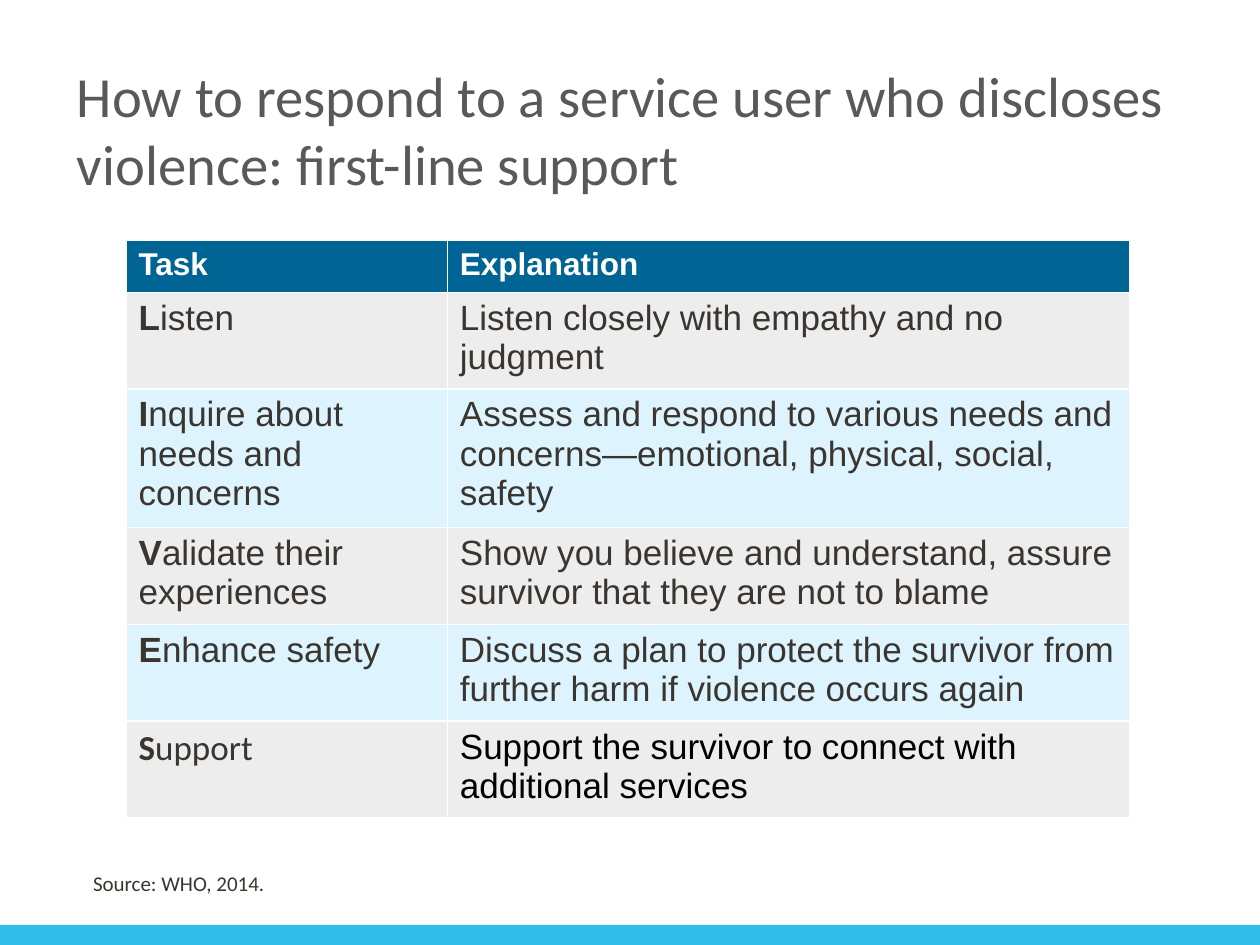
from pptx import Presentation
from pptx.dml.color import RGBColor
from pptx.enum.shapes import MSO_SHAPE
from pptx.enum.text import MSO_ANCHOR, PP_ALIGN
from pptx.util import Inches, Pt

# Content
TITLE = "How to respond to a service user who discloses violence: first-line support"
SOURCE = "Source: WHO, 2014."
HEADINGS = ("Task", "Explanation")
TASKS = [  # the first letter of each task spells LIVES
    ("Listen", "Listen closely with empathy and no judgment"),
    ("Inquire about needs and concerns",
     "Assess and respond to various needs and concerns—emotional, physical, social, safety"),
    ("Validate their experiences",
     "Show you believe and understand, assure survivor that they are not to blame"),
    ("Enhance safety",
     "Discuss a plan to protect the survivor from further harm if violence occurs again"),
    ("Support", "Support the survivor to connect with additional services"),
]
COLORS = {
    "title": "595959", "text": "3B352F", "black": "000000", "white": "FFFFFF",
    "header": "006595", "gray": "EDEDED", "pale": "DDF4FF", "bar": "32BDEA",
}
COLUMN_WIDTHS = (2.55, 5.42)
ROW_HEIGHT = 0.41


def color(name):
    return RGBColor.from_string(COLORS[name])


def add_text(paragraph, text, size=20, font="Arial", ink="text", bold=False):
    span = paragraph.add_run()
    span.text = text
    span.font.size = Pt(size)
    span.font.name = font
    span.font.bold = bold
    span.font.color.rgb = color(ink)


def fill_cell(cell, name):
    cell.fill.solid()
    cell.fill.fore_color.rgb = color(name)
    return cell.text_frame.paragraphs[0]


deck = Presentation()
deck.slide_width, deck.slide_height = Inches(10), Inches(7.5)
page = deck.slides.add_slide(deck.slide_layouts[5])

# Bottom bar
bar = page.shapes.add_shape(MSO_SHAPE.RECTANGLE, 0, Inches(7.34), deck.slide_width, Inches(0.2))
bar.shadow.inherit = False
bar.fill.solid()
bar.fill.fore_color.rgb = color("bar")
bar.line.fill.background()

# Title
title = page.shapes.title
title.left, title.top = Inches(0.51), Inches(0.49)
title.width, title.height = Inches(8.99), Inches(1.06)
title.text_frame.word_wrap = True
title.text_frame.vertical_anchor = MSO_ANCHOR.MIDDLE
heading = title.text_frame.paragraphs[0]
heading.alignment = PP_ALIGN.LEFT
add_text(heading, TITLE, size=32.4, font="Calibri", ink="title")

# Source line
box = page.shapes.add_textbox(Inches(0.64), Inches(6.86), Inches(4.74), Inches(0.3))
box.text_frame.word_wrap = True
add_text(box.text_frame.paragraphs[0], SOURCE, size=12, font="Calibri")

# Table: the default style supplies the white rules
row_count = len(TASKS) + 1
table = page.shapes.add_table(
    row_count, len(HEADINGS), Inches(1), Inches(1.91),
    Inches(sum(COLUMN_WIDTHS)), Inches(ROW_HEIGHT * row_count)).table
for column, width in zip(table.columns, COLUMN_WIDTHS):
    column.width = Inches(width)
for row in table.rows:
    row.height = Inches(ROW_HEIGHT)

for index, text in enumerate(HEADINGS):
    add_text(fill_cell(table.cell(0, index), "header"), text, size=18, ink="white", bold=True)

for number, (task, explanation) in enumerate(TASKS, start=1):
    band = "gray" if number % 2 else "pale"
    last = number == len(TASKS)
    task_font = "Calibri" if last else "Arial"
    paragraph = fill_cell(table.cell(number, 0), band)
    add_text(paragraph, task[0], font=task_font, bold=True)
    add_text(paragraph, task[1:], font=task_font)
    add_text(fill_cell(table.cell(number, 1), band), explanation,
             ink="black" if last else "text")

deck.save("out.pptx")
